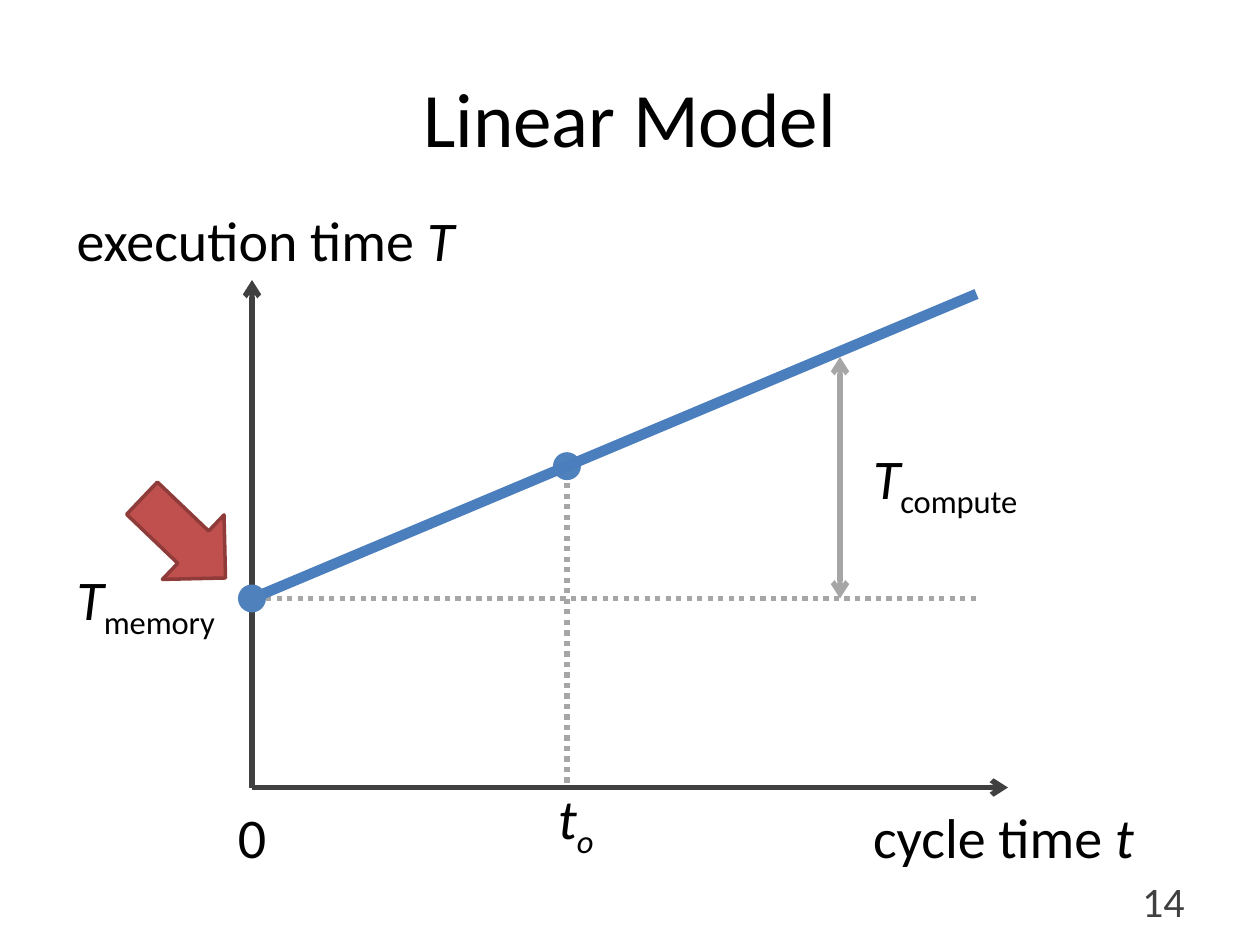
"""Build the Linear Model slide: execution time against cycle time."""
import lxml.etree
import pptx
import pptx.dml.color
import pptx.enum.dml
import pptx.enum.shapes
import pptx.enum.text
import pptx.oxml.ns
import pptx.util

Pt = pptx.util.Pt
RGB = pptx.dml.color.RGBColor.from_string
qn = pptx.oxml.ns.qn
SHAPE = pptx.enum.shapes.MSO_SHAPE
ALIGN = pptx.enum.text.PP_ALIGN
ANCHOR = pptx.enum.text.MSO_ANCHOR

COLORS = {
    "text": "000000",
    "axis": "404040",
    "guide": "A6A6A6",
    "model": "4B7EBC",
    "dot": "4F81BD",
    "pointer": "C0504D",
    "pointer_edge": "8E3B39",
}
ORIGIN_X, ORIGIN_Y = 144, 450
MEMORY_Y = 342
SAMPLE_X, SAMPLE_Y = 324, 266.4
MODEL_END_X, MODEL_END_Y = 558, 168
COMPUTE_X = 480
DOT_SIZE = 16


def add_line(container, start, end, color, width=3, dotted=False, arrows=()):
    connector = container.add_connector(
        pptx.enum.shapes.MSO_CONNECTOR.STRAIGHT, *map(Pt, start + end)
    )
    connector.line.color.rgb = RGB(COLORS[color])
    connector.line.width = Pt(width)
    if dotted:
        connector.line.dash_style = pptx.enum.dml.MSO_LINE.ROUND_DOT
    properties = connector._element.spPr
    for arrow in arrows:
        lxml.etree.SubElement(properties.find(qn("a:ln")), qn(f"a:{arrow}"), type="arrow")
    lxml.etree.SubElement(properties, qn("a:effectLst"))


def add_text(container, box, runs, size=32, color="text", align=ALIGN.LEFT,
             anchor=ANCHOR.TOP, wrap=False):
    frame = container.add_textbox(*map(Pt, box)).text_frame
    frame.word_wrap = wrap
    frame.vertical_anchor = anchor
    paragraph = frame.paragraphs[0]
    paragraph.alignment = align
    paragraph.font.name = "Calibri"
    paragraph.font.size = Pt(size)
    paragraph.font.color.rgb = RGB(COLORS[color])
    for text, style in runs:
        run = paragraph.add_run()
        run.text = text
        if "italic" in style:
            run.font.italic = True
        if "subscript" in style:
            run._r.get_or_add_rPr().set("baseline", "-25000")


presentation = pptx.Presentation()
presentation.slide_width = Pt(720)
presentation.slide_height = Pt(540)
slide = presentation.slides.add_slide(presentation.slide_layouts[6])
shapes = slide.shapes

sample = shapes.add_group_shape().shapes
add_line(sample, (SAMPLE_X, 270), (SAMPLE_X, ORIGIN_Y), "guide", dotted=True)
add_text(sample, (311.8, 444, 36, 46), [("t", "italic"), ("o", "italic subscript")])

add_line(shapes, (146, MEMORY_Y), (MODEL_END_X, MEMORY_Y), "guide", dotted=True)
for axis_end in ((ORIGIN_X, 160), (576, ORIGIN_Y)):
    add_line(shapes, (ORIGIN_X, ORIGIN_Y), axis_end, "axis", arrows=["tailEnd"])
add_line(shapes, (ORIGIN_X, MEMORY_Y), (MODEL_END_X, MODEL_END_Y), "model", width=6)
add_line(shapes, (COMPUTE_X, MEMORY_Y), (COMPUTE_X, 204), "guide",
         arrows=["headEnd", "tailEnd"])

for container, x, y in ((sample, SAMPLE_X, SAMPLE_Y), (shapes, ORIGIN_X, MEMORY_Y)):
    dot = container.add_shape(
        SHAPE.OVAL, Pt(x - DOT_SIZE / 2), Pt(y - DOT_SIZE / 2), Pt(DOT_SIZE), Pt(DOT_SIZE)
    )
    dot.shadow.inherit = False
    dot.fill.solid()
    dot.fill.fore_color.rgb = RGB(COLORS["dot"])
    dot.line.fill.background()

pointer = shapes.add_shape(SHAPE.RIGHT_ARROW, Pt(72), Pt(282), Pt(66), Pt(51))
pointer.rotation = 43.7
pointer.shadow.inherit = False
pointer.fill.solid()
pointer.fill.fore_color.rgb = RGB(COLORS["pointer"])
pointer.line.color.rgb = RGB(COLORS["pointer_edge"])
pointer.line.width = Pt(2)

add_text(shapes, (36, 21.6, 648, 90), [("Linear Model", "")], size=44,
         align=ALIGN.CENTER, anchor=ANCHOR.MIDDLE, wrap=True)
for box, runs in (
    ((36.7, 113.8, 238, 46), [("execution time ", ""), ("T", "italic")]),
    ((491.8, 455, 165, 46), [("cycle time ", ""), ("t", "italic")]),
    ((36.7, 319, 104, 46), [("T", "italic"), ("memory", "subscript")]),
    ((491.8, 249.8, 108, 46), [("T", "italic"), ("compute", "subscript")]),
    ((128.9, 455, 31, 46), [("0", "")]),
):
    add_text(shapes, box, runs)
add_text(shapes, (516, 500.4, 168, 28.8), [("14", "")], size=24, color="axis",
         align=ALIGN.RIGHT, anchor=ANCHOR.MIDDLE, wrap=True)

presentation.save("out.pptx")
